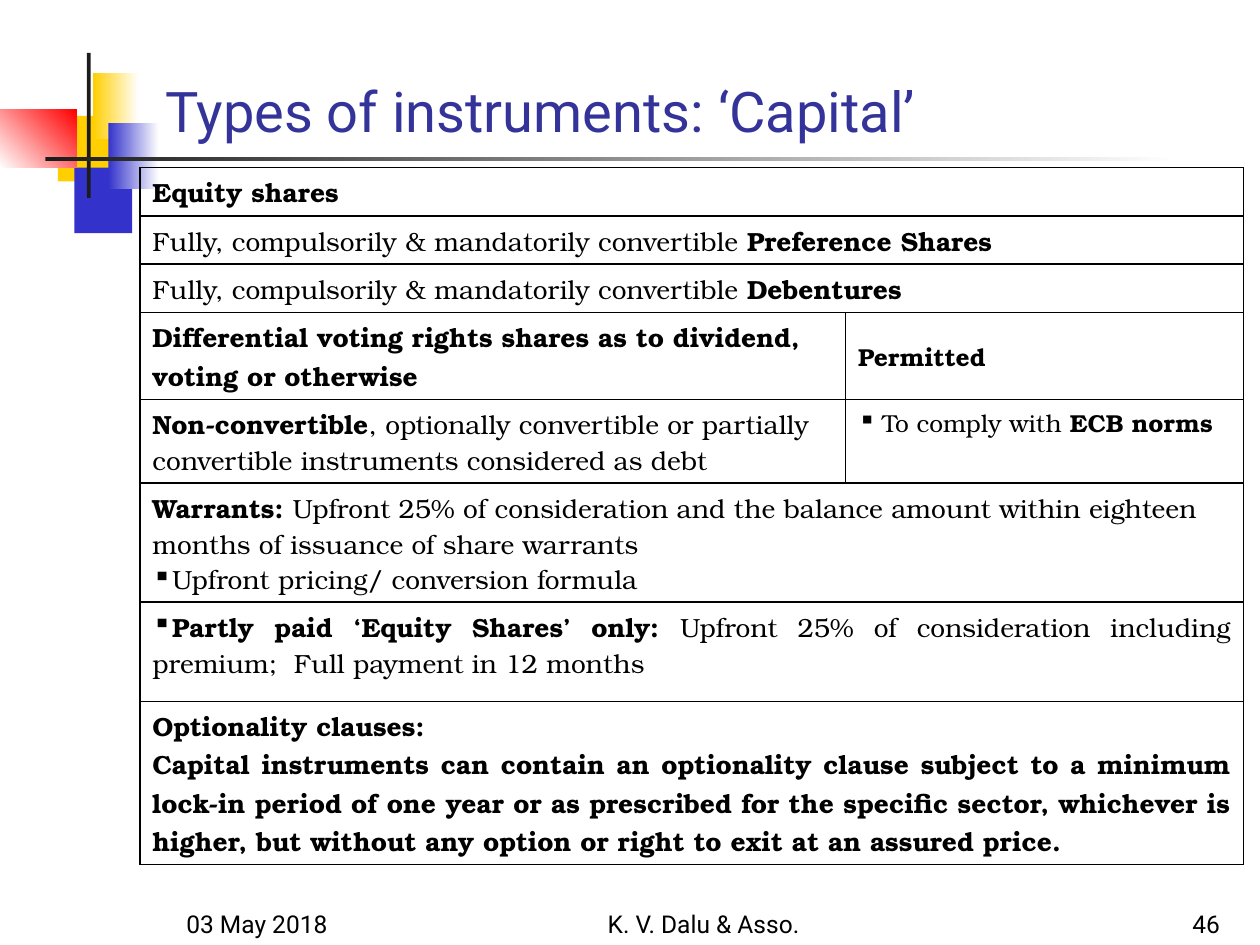
"""Build a slide listing the types of capital instruments."""
from dataclasses import dataclass

from lxml import etree
from pptx import Presentation
from pptx.dml.color import RGBColor
from pptx.enum import shapes, text
from pptx.oxml.ns import qn
from pptx.util import Inches, Pt

COLORS = {"yellow": "FFCF01", "blue": "3333CC", "red": "FF0000", "dark": "1C1C1C",
          "white": "FFFFFF", "title": "333399", "black": "000000"}
ALIGN = text.PP_ALIGN
ANCHOR = text.MSO_ANCHOR
SERIF, SANS = "TeX Gyre Bonum", "Roboto"


@dataclass
class Block:
    left: float
    top: float
    width: float
    height: float
    start: str
    end: str = ""
    angle: float = 0


@dataclass
class Line:
    words: str
    align: ALIGN = ALIGN.LEFT
    bullet: bool = False
    indent: float = 0


@dataclass
class Entry:
    lines: list[Line]
    size: float = 15
    anchor: ANCHOR = ANCHOR.TOP


@dataclass
class Row:
    height: float
    entries: list[Entry]


@dataclass
class Footer:
    left: float
    width: float
    words: str
    align: ALIGN


BLOCKS = [
    Block(0.46, 0.92, 0.48, 0.52, "yellow"),
    Block(0.59, 1.33, 0.46, 0.52, "blue"),
    Block(0.74, 0.58, 0.36, 0.52, "yellow", "white"),
    Block(0.86, 0.98, 0.4, 0.52, "blue", "white"),
    Block(0, 0.87, 0.61, 0.46, "white", "red", 45),
    Block(0.69, 0.42, 0.03, 1.15, "dark"),
    Block(0.36, 1.25, 9, 0.03, "dark", "white"),
]

ROWS = [
    Row(0.38, [Entry([Line("**Equity shares**")])]),
    Row(0.38, [Entry([Line("Fully, compulsorily & mandatorily convertible **Preference Shares**")])]),
    Row(0.38, [Entry([Line("Fully, compulsorily & mandatorily convertible **Debentures**")])]),
    Row(0.69, [
        Entry([Line("**Differential voting rights shares as to dividend, voting or otherwise**")]),
        Entry([Line("**Permitted**")], 14, ANCHOR.MIDDLE)]),
    Row(0.66, [
        Entry([Line("**Non-convertible**, optionally convertible or partially convertible "
                    "instruments considered as debt")]),
        Entry([Line("To comply with **ECB norms**", bullet=True, indent=0.19)], 14)]),
    Row(0.94, [Entry([
        Line("**Warrants: **Upfront 25% of consideration and the balance amount within "
             "eighteen months of issuance of share warrants"),
        Line("Upfront pricing/ conversion formula", bullet=True)])]),
    Row(0.79, [Entry([
        Line("**Partly paid ‘Equity Shares’ only: **Upfront 25% of consideration including "
             "premium;  Full payment in 12 months", ALIGN.JUSTIFY, True)])]),
    Row(1.29, [Entry([
        Line("**Optionality clauses:**"),
        Line("**Capital instruments can contain an optionality clause subject to a minimum "
             "lock-in period of one year or as prescribed for the specific sector, whichever is "
             "higher, but without any option or right to exit at an assured price.**",
             ALIGN.JUSTIFY)])]),
]

FOOTERS = [
    Footer(1.38, 2.08, "03 May 2018", ALIGN.LEFT),
    Footer(4, 3.17, "K. V. Dalu & Asso.", ALIGN.CENTER),
    Footer(7.7, 2.08, "46", ALIGN.RIGHT),
]


def color(name: str) -> RGBColor:
    """Return the named colour."""
    return RGBColor.from_string(COLORS[name])


def write(frame, lines: list[Line], *, size: float, font: str, ink: str = "black",
          anchor: ANCHOR = ANCHOR.BOTTOM) -> None:
    """Fill a text frame, setting words between double asterisks in bold."""
    frame.word_wrap = True
    frame.vertical_anchor = anchor
    for index, line in enumerate(lines):
        para = frame.paragraphs[0] if index == 0 else frame.add_paragraph()
        para.alignment = line.align
        if line.bullet:
            props = para._p.get_or_add_pPr()
            props.set("marL", str(Inches(line.indent)))
            props.set("indent", str(-Inches(line.indent)))
            etree.SubElement(props, qn("a:buChar")).set("char", "▪")
        for part, words in enumerate(line.words.split("**")):
            if words:
                span = para.add_run()
                span.text = words
                span.font.size = Pt(size)
                span.font.name = font
                span.font.bold = part % 2 == 1
                span.font.color.rgb = color(ink)


def draw_block(page, block: Block) -> None:
    """Draw a plain or gradient rectangle of the corner ornament."""
    box = page.shapes.add_shape(
        shapes.MSO_SHAPE.RECTANGLE, Inches(block.left), Inches(block.top),
        Inches(block.width), Inches(block.height))
    box.shadow.inherit = False
    box.line.fill.background()
    if block.end:
        box.fill.gradient()
        box.fill.gradient_angle = block.angle
        for stop, name in zip(box.fill.gradient_stops, (block.start, block.end)):
            stop.color.rgb = color(name)
    else:
        box.fill.solid()
        box.fill.fore_color.rgb = color(block.start)


def outline(cell) -> None:
    """Clear the cell fill and give all four sides a thin black border."""
    props = cell._tc.get_or_add_tcPr()
    for side in ("lnL", "lnR", "lnT", "lnB"):
        border = etree.SubElement(props, qn(f"a:{side}"), w=str(Pt(1)))
        fill = etree.SubElement(border, qn("a:solidFill"))
        etree.SubElement(fill, qn("a:srgbClr"), val=COLORS["black"])
    cell.fill.background()


def draw_table(page, rows: list[Row], widths: tuple[float, ...]) -> None:
    """Draw the table, merging across rows that hold a single entry."""
    table = page.shapes.add_table(
        len(rows), len(widths), Inches(1.11), Inches(1.33),
        Inches(sum(widths)), Inches(sum(row.height for row in rows))).table
    table.first_row = table.horz_banding = False
    for column, width in zip(table.columns, widths):
        column.width = Inches(width)
    for index, row in enumerate(rows):
        table.rows[index].height = Inches(row.height)
        cells = [table.cell(index, place) for place in range(len(widths))]
        for cell in cells:
            cell.margin_top = cell.margin_bottom = Inches(0.04)
            outline(cell)
        if len(row.entries) == 1:
            cells[0].merge(cells[-1])
        for cell, entry in zip(cells, row.entries):
            write(cell.text_frame, entry.lines, size=entry.size, font=SERIF)
            cell.vertical_anchor = entry.anchor


def main() -> None:
    """Build and save the deck."""
    deck = Presentation()
    deck.slide_width, deck.slide_height = Inches(10), Inches(7.5)
    page = deck.slides.add_slide(deck.slide_layouts[5])
    for block in BLOCKS:
        draw_block(page, block)
    title = page.shapes.title
    title.left, title.top = Inches(1.21), Inches(0)
    title.width, title.height = Inches(8.37), Inches(1.19)
    write(title.text_frame, [Line("Types of instruments: ‘Capital’")],
          size=32, font=SANS, ink="title")
    draw_table(page, ROWS, (5.6, 3.16))
    for footer in FOOTERS:
        box = page.shapes.add_textbox(Inches(footer.left), Inches(7), Inches(footer.width), Inches(0.5))
        write(box.text_frame, [Line(footer.words, footer.align)], size=14, font=SANS)
    deck.save("out.pptx")


if __name__ == "__main__":
    main()
